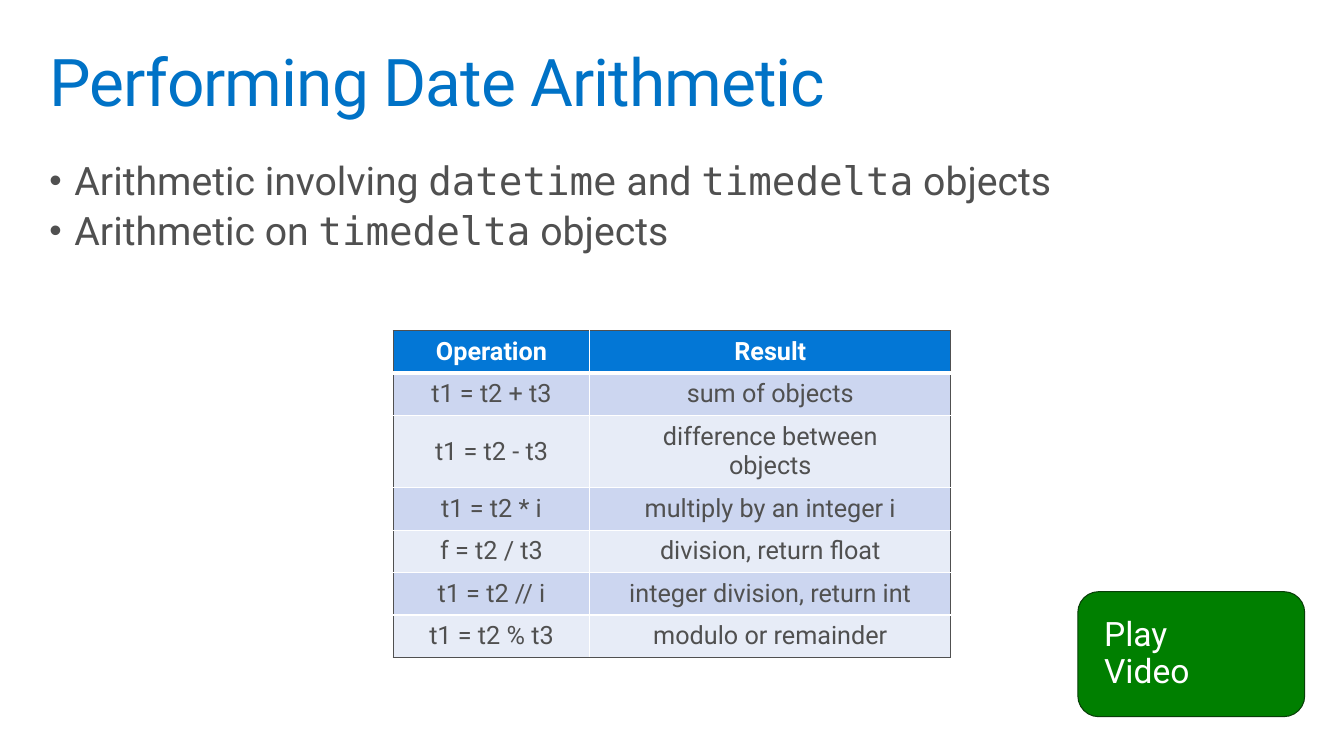
from dataclasses import dataclass
from typing import Any

from lxml.etree import SubElement
from pptx import Presentation
from pptx.dml.color import RGBColor
from pptx.enum.shapes import MSO_SHAPE
from pptx.enum.text import MSO_ANCHOR, PP_ALIGN
from pptx.oxml.ns import qn
from pptx.slide import Slide
from pptx.table import _Cell
from pptx.text.text import TextFrame, _Paragraph
from pptx.util import Inches, Pt

BLUE = RGBColor(0x00, 0x72, 0xC6)
HEADER_BLUE = RGBColor(0x03, 0x77, 0xD6)
GRAY = RGBColor(0x50, 0x50, 0x50)
WHITE = RGBColor(0xFF, 0xFF, 0xFF)
GREEN = RGBColor(0x00, 0x7F, 0x00)
DARK_GREEN = RGBColor(0x08, 0x3E, 0x08)
BAND_DARK = RGBColor(0xCC, 0xD6, 0xF0)
BAND_LIGHT = RGBColor(0xE7, 0xEC, 0xF7)

SANS = "Roboto"
MONO = "DejaVu Sans Mono"
COLUMN_WIDTHS = (1.95, 3.58)
ROW_HEIGHT = 0.42


@dataclass(frozen=True)
class TextStyle:
    size: float
    color: RGBColor
    bold: bool = False
    spacing: int = 0


@dataclass(frozen=True)
class Operation:
    expression: str
    result: str


TITLE_STYLE = TextStyle(47, BLUE, spacing=-70)
BULLET_STYLE = TextStyle(28, GRAY)
BUTTON_STYLE = TextStyle(24, WHITE)
HEADER_STYLE = TextStyle(18, WHITE, bold=True)
CELL_STYLE = TextStyle(18, GRAY)

BULLETS = (
    (("Arithmetic involving ", SANS), ("datetime", MONO), (" and ", SANS),
     ("timedelta", MONO), (" objects", SANS)),
    (("Arithmetic on ", SANS), ("timedelta", MONO), (" objects", SANS)),
)

OPERATIONS = (
    Operation("Operation", "Result"),
    Operation("t1 = t2 + t3", "sum of objects"),
    Operation("t1 = t2 - t3", "difference between objects"),
    Operation("t1 = t2 * i", "multiply by an integer i"),
    Operation("f = t2 / t3", "division, return float"),
    Operation("t1 = t2 // i", "integer division, return int"),
    Operation("t1 = t2 % t3", "modulo or remainder"),
)


def apply_format(target: Any, values: dict[str, Any]) -> None:
    for name, value in values.items():
        setattr(target, name, value)


def set_margins(target: Any, horizontal: float, vertical: float) -> None:
    apply_format(target, {
        "margin_left": Inches(horizontal), "margin_right": Inches(horizontal),
        "margin_top": Inches(vertical), "margin_bottom": Inches(vertical),
    })


def add_text(paragraph: _Paragraph, text: str, style: TextStyle, font_name: str = SANS) -> None:
    run = paragraph.add_run()
    run.text = text
    apply_format(run.font, {"name": font_name, "size": Pt(style.size), "bold": style.bold})
    run.font.color.rgb = style.color
    if style.spacing:
        run.font._element.set("spc", str(style.spacing))


def add_text_frame(slide: Slide, top: float, height: float) -> TextFrame:
    box = slide.shapes.add_textbox(Inches(0.39), Inches(top), Inches(12.55), Inches(height))
    box.text_frame.word_wrap = True
    set_margins(box.text_frame, 0.1, 0.1)
    return box.text_frame


def add_title(slide: Slide) -> None:
    paragraph = add_text_frame(slide, 0.39, 0.98).paragraphs[0]
    paragraph.line_spacing = 0.9
    add_text(paragraph, "Performing Date Arithmetic", TITLE_STYLE)


def add_bullets(slide: Slide) -> None:
    frame = add_text_frame(slide, 1.5, 1.13)
    for index, pieces in enumerate(BULLETS):
        paragraph = frame.add_paragraph() if index else frame.paragraphs[0]
        properties = paragraph._p.get_or_add_pPr()
        properties.set("marL", str(Inches(0.25)))
        properties.set("indent", str(-Inches(0.25)))
        SubElement(properties, qn("a:buSzPct"), val="90000")
        SubElement(properties, qn("a:buFont"), typeface="Arial")
        SubElement(properties, qn("a:buChar"), char="•")
        apply_format(paragraph, {"line_spacing": 0.9, "space_before": Pt(5.9 if index else 0)})
        for text, font_name in pieces:
            add_text(paragraph, text, BULLET_STYLE, font_name)


def add_border(cell: _Cell, side: str, color: RGBColor, width: float) -> None:
    properties = cell._tc.get_or_add_tcPr()
    line = SubElement(properties, qn(f"a:ln{side}"), w=str(Pt(width)))
    fill = SubElement(line, qn("a:solidFill"))
    SubElement(fill, qn("a:srgbClr"), val=str(color))


def add_operation_table(slide: Slide) -> None:
    row_count, column_count = len(OPERATIONS), len(COLUMN_WIDTHS)
    table = slide.shapes.add_table(
        row_count, column_count, Inches(3.9), Inches(3.28),
        Inches(sum(COLUMN_WIDTHS)), Inches(ROW_HEIGHT * row_count),
    ).table
    for column, width in zip(table.columns, COLUMN_WIDTHS):
        column.width = Inches(width)
    last_row, last_column = row_count - 1, column_count - 1
    for row, operation in enumerate(OPERATIONS):
        table.rows[row].height = Inches(ROW_HEIGHT)
        band = BAND_DARK if row % 2 else BAND_LIGHT
        for column, text in enumerate((operation.expression, operation.result)):
            cell = table.cell(row, column)
            edges = {"L": column == 0, "R": column == last_column,
                     "T": row == 0, "B": row == last_row}
            for side, is_outer in edges.items():
                below_header = (row, side) in ((0, "B"), (1, "T"))
                add_border(cell, side, GRAY if is_outer else WHITE, 3 if below_header else 1)
            cell.fill.solid()
            cell.fill.fore_color.rgb = band if row else HEADER_BLUE
            cell.vertical_anchor = MSO_ANCHOR.MIDDLE
            set_margins(cell, 0.3, 0.06)
            paragraph = cell.text_frame.paragraphs[0]
            paragraph.alignment = PP_ALIGN.CENTER
            add_text(paragraph, text, CELL_STYLE if row else HEADER_STYLE)


def add_play_button(slide: Slide) -> None:
    button = slide.shapes.add_shape(
        MSO_SHAPE.ROUNDED_RECTANGLE, Inches(10.69), Inches(5.87), Inches(2.25), Inches(1.24))
    button.shadow.inherit = False
    button.fill.solid()
    button.fill.fore_color.rgb = GREEN
    button.line.color.rgb = DARK_GREEN
    button.line.width = Pt(0.75)
    frame = button.text_frame
    apply_format(frame, {"word_wrap": True, "vertical_anchor": MSO_ANCHOR.MIDDLE})
    set_margins(frame, 0.2, 0.16)
    paragraph = frame.paragraphs[0]
    apply_format(paragraph, {"alignment": PP_ALIGN.LEFT, "line_spacing": 0.9})
    add_text(paragraph, "Play ", BUTTON_STYLE)
    paragraph.add_line_break()
    add_text(paragraph, "Video", BUTTON_STYLE)


def main() -> None:
    presentation = Presentation()
    apply_format(presentation, {"slide_width": Inches(13.33), "slide_height": Inches(7.5)})
    slide = presentation.slides.add_slide(presentation.slide_layouts[6])
    add_bullets(slide)
    add_title(slide)
    add_play_button(slide)
    add_operation_table(slide)
    presentation.save("out.pptx")


if __name__ == "__main__":
    main()
